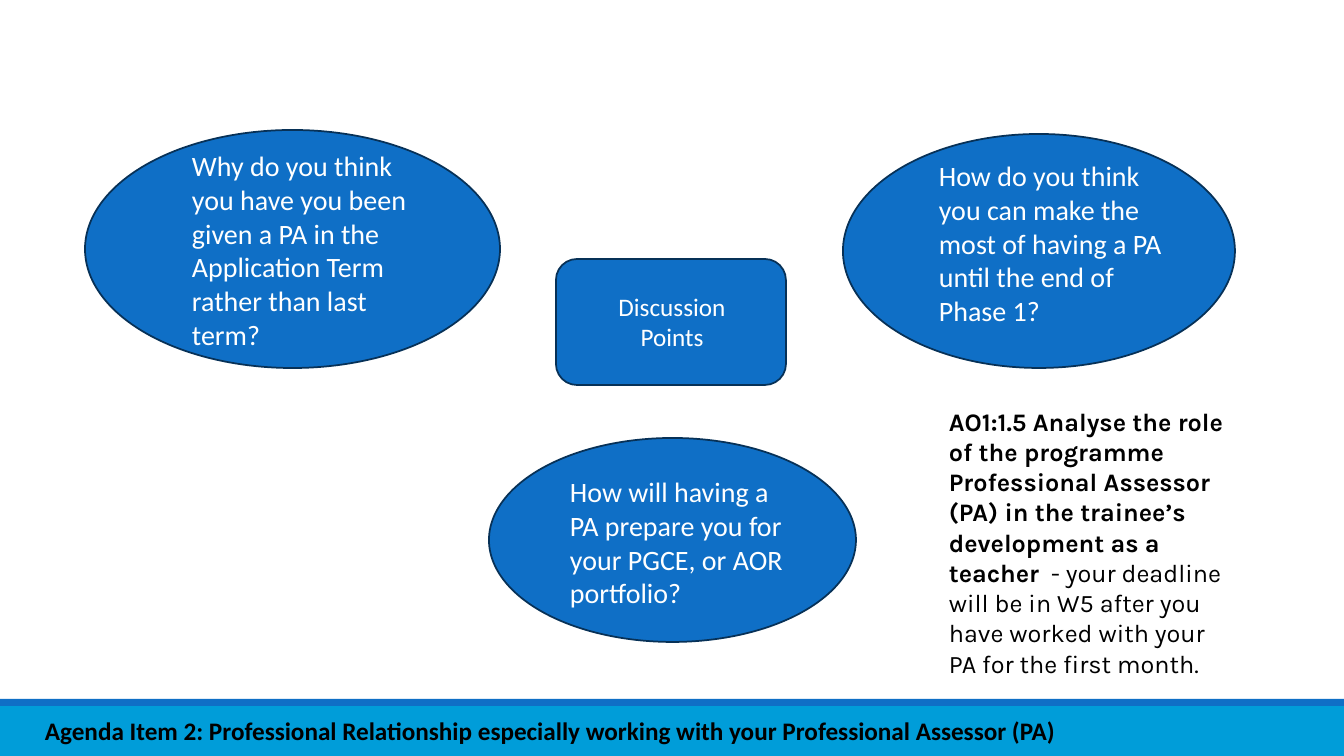
from pptx import Presentation
from pptx.dml.color import RGBColor
from pptx.enum.shapes import MSO_SHAPE as Shape
from pptx.enum.text import MSO_AUTO_SIZE as AutoSize, PP_ALIGN as Align
from pptx.util import Pt

PX = 914400 / 100.8  # EMU in one px
WIDTH, HEIGHT = 1344, 756
BLUE, CYAN, NAVY, WHITE, BLACK = "0F6FC6", "009DD9", "073157", "FFFFFF", "000000"

# Content: boxes are left, top, width, height in px
bands = [((0, 706, WIDTH, 50), CYAN), ((0, 699, WIDTH, 7), BLUE)]

# Shape, shape box, text box, text, size, alignment
bubbles = [
    (Shape.OVAL, (85, 130, 415, 238), (182, 144, 253, 214),
     "Why do you think you have you been given a PA in the Application Term "
     "rather than last term?", 20, Align.LEFT),
    (Shape.OVAL, (489, 438, 367, 204), (560, 470, 253, 146),
     "How will having a PA prepare you for your PGCE, or AOR portfolio?", 20, Align.LEFT),
    (Shape.OVAL, (843, 134, 392, 234), (929, 154, 262, 179),
     "How do you think you can make the most of having a PA until the end of Phase 1?",
     20, Align.LEFT),
    (Shape.ROUNDED_RECTANGLE, (556, 259, 230, 126), (584, 286, 176, 72),
     "Discussion Points", 18, Align.CENTER),
]

# Box, font, runs of (text, bold)
notes = [
    ((35, 710, 1272, 40), "Calibri",
     [("Agenda Item 2: Professional Relationship especially working with your "
       "Professional Assessor (PA)", True)]),
    ((939, 401, 295, 285), "Karla",
     [("AO1:1.5 Analyse the role of the programme Professional Assessor (PA) "
       "in the trainee’s development as a teacher", True),
      ("  - your deadline will be in W5 after you have worked with your PA "
       "for the first month.", False)]),
]


def emu(box):
    return [round(length * PX) for length in box]


def color(value):
    return RGBColor.from_string(value)


def add_block(page, kind, box, fill, line=None):
    block = page.shapes.add_shape(kind, *emu(box))
    block.shadow.inherit = False
    block.fill.solid()
    block.fill.fore_color.rgb = color(fill)
    if line:
        block.line.color.rgb = color(line)
        block.line.width = Pt(1.25)
    else:
        block.line.fill.background()


def add_text(page, box, runs, font, size, ink, align=Align.LEFT):
    frame = page.shapes.add_textbox(*emu(box)).text_frame
    frame.word_wrap = True
    frame.auto_size = AutoSize.SHAPE_TO_FIT_TEXT
    para = frame.paragraphs[0]
    para.alignment = align
    for text, bold in runs:
        span = para.add_run()
        span.text = text
        span.font.name = font
        span.font.size = Pt(size)
        span.font.bold = bold
        span.font.color.rgb = color(ink)


def main():
    deck = Presentation()
    deck.slide_width, deck.slide_height = emu((WIDTH, HEIGHT))
    page = deck.slides.add_slide(deck.slide_layouts[6])

    # Footer bands
    for box, fill in bands:
        add_block(page, Shape.RECTANGLE, box, fill)

    # Discussion bubbles
    for kind, box, text_box, text, size, align in bubbles:
        add_block(page, kind, box, BLUE, NAVY)
        add_text(page, text_box, [(text, False)], "Calibri", size, WHITE, align)

    # Agenda line and objective
    for box, font, runs in notes:
        add_text(page, box, runs, font, 18, BLACK)

    deck.save("out.pptx")


if __name__ == "__main__":
    main()
